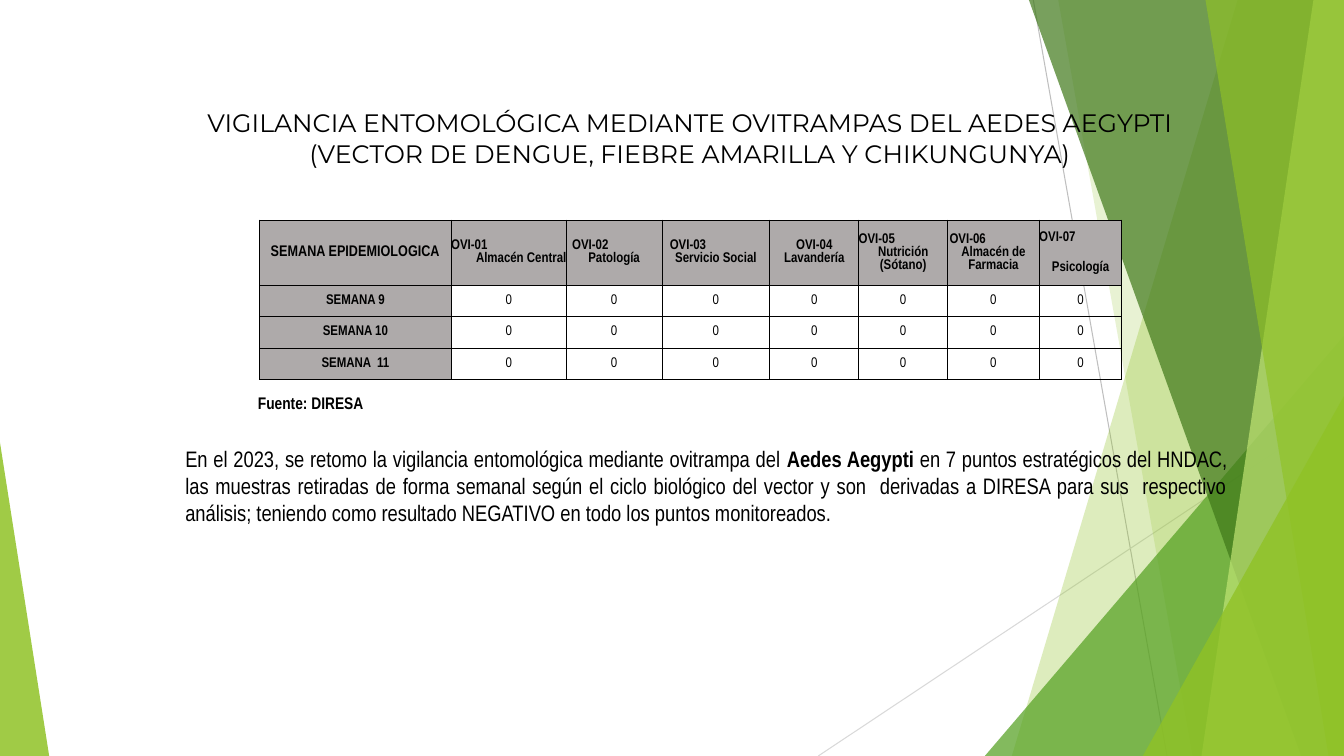
from dataclasses import dataclass

from lxml.etree import SubElement
from pptx import Presentation
from pptx.dml.color import RGBColor
from pptx.enum.shapes import MSO_CONNECTOR, MSO_SHAPE
from pptx.enum.text import MSO_ANCHOR, MSO_AUTO_SIZE, PP_ALIGN
from pptx.oxml.ns import qn
from pptx.util import Cm, Pt


@dataclass(frozen=True)
class Theme:
    lime: str = "90C226"
    green: str = "54A021"
    forest: str = "3F7819"
    pale: str = "C0E474"
    ink: str = "000000"
    header: str = "AEAAAA"
    steep_line: str = "BFBFBF"
    flat_line: str = "D9D9D9"
    title_font: str = "Montserrat"
    body_font: str = "Arial Narrow"
    title_size: int = 18
    body_size: int = 16
    source_size: int = 12
    corner_size: int = 11
    cell_size: int = 10


@dataclass(frozen=True)
class Box:
    left: float
    top: float
    width: float
    height: float

    def emu(self):
        return Cm(self.left), Cm(self.top), Cm(self.width), Cm(self.height)


THEME = Theme()
SLIDE = Box(0, 0, 33.87, 19.05)
COLUMN_WIDTHS = [4.83, 2.9, 2.41, 2.72, 2.24, 2.24, 2.31, 2.08]
ROW_HEIGHTS = [1.65, 0.79, 0.79, 0.79]
WEEKS = ["SEMANA 9", "SEMANA 10", "SEMANA  11"]
LEFT, CENTER, RIGHT = PP_ALIGN.LEFT, PP_ALIGN.CENTER, PP_ALIGN.RIGHT
TRAPS = [
    ("OVI-01", LEFT, 0, "Almacén Central", RIGHT, 0),
    ("OVI-02", LEFT, 0.15, "Patología", CENTER, 0),
    ("OVI-03", LEFT, 0.2, "Servicio Social", CENTER, 0),
    ("OVI-04", CENTER, 0, "Lavandería", CENTER, 0),
    ("OVI-05", LEFT, 0, "Nutrición (Sótano)", CENTER, 0),
    ("OVI-06", LEFT, 0.05, "Almacén de Farmacia", CENTER, 0),
    ("OVI-07", LEFT, 0, "Psicología", CENTER, 12),
]


def write(paragraph, text, size=THEME.cell_size, font=THEME.body_font,
          color=THEME.ink, bold=False, align=CENTER, indent=0, before=0):
    paragraph.alignment = align
    paragraph.space_before = Pt(before)
    if indent:
        properties = paragraph._p.get_or_add_pPr()
        properties.set("marL", str(Cm(indent)))
        properties.set("indent", "0")
    run = paragraph.add_run()
    run.text = text
    run.font.size = Pt(size)
    run.font.name = font
    run.font.bold = bold
    run.font.color.rgb = RGBColor.from_string(color)


def paint(shape, color, opacity):
    shape.shadow.inherit = False
    shape.fill.solid()
    shape.fill.fore_color.rgb = RGBColor.from_string(color)
    shape.line.fill.background()
    tint = shape.fill._xPr.find(qn("a:solidFill"))[0]
    SubElement(tint, qn("a:alpha"), val=str(opacity * 1000))


def add_triangle(slide, box, apex, color, opacity):
    triangle = slide.shapes.add_shape(MSO_SHAPE.ISOSCELES_TRIANGLE, *box.emu())
    triangle.adjustments[0] = apex
    paint(triangle, color, opacity)


def add_facet(slide, box, top_x, bottom_x, color, opacity):
    right, bottom = box.left + box.width, box.top + box.height
    outline = slide.shapes.build_freeform(Cm(box.left + top_x), Cm(box.top))
    outline.add_line_segments([
        (Cm(right), Cm(box.top)),
        (Cm(right), Cm(bottom)),
        (Cm(box.left + bottom_x), Cm(bottom)),
    ], close=True)
    paint(outline.convert_to_shape(), color, opacity)


def add_corner(slide, box, x, y, color, opacity):
    corner = Box(box.left + x, box.top + y, box.width - x, box.height - y)
    add_triangle(slide, corner, 1, color, opacity)


def add_ray(slide, box, start, end, color):
    ray = slide.shapes.add_connector(
        MSO_CONNECTOR.STRAIGHT,
        Cm(box.left + start[0]), Cm(box.top + start[1]),
        Cm(box.left + end[0]), Cm(box.top + end[1]))
    ray.line.color.rgb = RGBColor.from_string(color)
    ray.line.width = Pt(0.75)
    SubElement(ray._element.spPr, qn("a:effectLst"))


def add_decoration(slide, box):
    add_ray(slide, box, (5.42, 0), (8.79, box.height), THEME.steep_line)
    add_ray(slide, box, (box.width, 10.24), (0, box.height), THEME.flat_line)
    for draw, first, second, color, opacity in [
        (add_facet, 10.57, 4.88, THEME.lime, 30),
        (add_facet, 6.05, 9.43, THEME.lime, 20),
        (add_corner, 4.2, 8.46, THEME.green, 72),
        (add_facet, 5.31, 12.17, THEME.forest, 70),
        (add_facet, 12.48, 9.66, THEME.pale, 70),
        (add_facet, 9.76, 12.86, THEME.lime, 65),
        (add_corner, 8.18, 9.98, THEME.lime, 80),
    ]:
        draw(slide, box, first, second, color, opacity)


def format_cell(cell, fill=None):
    cell.margin_left = cell.margin_right = cell.margin_top = cell.margin_bottom = 0
    cell.vertical_anchor = MSO_ANCHOR.MIDDLE
    if fill:
        cell.fill.solid()
        cell.fill.fore_color.rgb = RGBColor.from_string(fill)
    else:
        cell.fill.background()
    properties = cell._tc.get_or_add_tcPr()
    for position, side in enumerate(("a:lnL", "a:lnR", "a:lnT", "a:lnB")):
        border = SubElement(properties, qn(side), w=str(Pt(0.5)))
        ink = SubElement(border, qn("a:solidFill"))
        SubElement(ink, qn("a:srgbClr"), val=THEME.ink)
        properties.insert(position, border)


def add_trap_table(slide, box):
    table = slide.shapes.add_table(
        len(ROW_HEIGHTS), len(COLUMN_WIDTHS), *box.emu()).table
    table.first_row = table.horz_banding = False
    for column, width in zip(table.columns, COLUMN_WIDTHS):
        column.width = Cm(width)
    for row, height in zip(table.rows, ROW_HEIGHTS):
        row.height = Cm(height)

    corner = table.cell(0, 0)
    format_cell(corner, THEME.header)
    write(corner.text_frame.paragraphs[0], "SEMANA EPIDEMIOLOGICA",
          size=THEME.corner_size, bold=True)
    for column, trap in enumerate(TRAPS, 1):
        code, code_align, indent, place, place_align, gap = trap
        heading = table.cell(0, column)
        format_cell(heading, THEME.header)
        write(heading.text_frame.paragraphs[0], code, bold=True,
              align=code_align, indent=indent)
        write(heading.text_frame.add_paragraph(), place, bold=True,
              align=place_align, before=gap)
    for row, week in enumerate(WEEKS, 1):
        for column, value in enumerate([week] + ["0"] * len(TRAPS)):
            cell = table.cell(row, column)
            format_cell(cell, None if column else THEME.header)
            write(cell.text_frame.paragraphs[0], value, bold=column == 0)


def add_text(slide, box, *pieces, wrap=True, **style):
    frame = slide.shapes.add_textbox(*box.emu()).text_frame
    frame.word_wrap = wrap
    frame.auto_size = MSO_AUTO_SIZE.SHAPE_TO_FIT_TEXT
    for text, bold in pieces:
        write(frame.paragraphs[0], text, bold=bold, **style)


def add_surveillance_slide(presentation, box):
    slide = presentation.slides.add_slide(presentation.slide_layouts[6])
    add_decoration(slide, Box(box.left + 20.62, box.top, 13.25, box.height))
    add_triangle(slide, Box(box.left, box.top + 11.15, 1.24, 7.9), 0, THEME.lime, 85)
    add_trap_table(slide, Box(box.left + 6.54, box.top + 5.54,
                              sum(COLUMN_WIDTHS), sum(ROW_HEIGHTS)))
    add_text(slide, Box(box.left + 4, box.top + 2.59, 26.77, 1.8),
             ("VIGILANCIA ENTOMOLÓGICA MEDIANTE OVITRAMPAS DEL AEDES AEGYPTI "
              "(VECTOR DE DENGUE, FIEBRE AMARILLA Y CHIKUNGUNYA)", False),
             size=THEME.title_size, font=THEME.title_font)
    add_text(slide, Box(box.left + 6.25, box.top + 9.78, 3.3, 0.76),
             ("Fuente: DIRESA", True),
             wrap=False, size=THEME.source_size, align=LEFT)
    add_text(slide, Box(box.left + 4.42, box.top + 11.1, 26.77, 2.31),
             ("En el 2023, se retomo la vigilancia entomológica mediante ovitrampa del ", False),
             ("Aedes Aegypti ", True),
             ("en 7 puntos estratégicos del HNDAC, las muestras retiradas de forma "
              "semanal según el ciclo biológico del vector y son  derivadas a DIRESA "
              "para sus  respectivo análisis; teniendo como resultado NEGATIVO en "
              "todo los puntos monitoreados.", False),
             size=THEME.body_size, align=PP_ALIGN.JUSTIFY)


def main():
    presentation = Presentation()
    presentation.slide_width = Cm(SLIDE.width)
    presentation.slide_height = Cm(SLIDE.height)
    add_surveillance_slide(presentation, SLIDE)
    presentation.save("out.pptx")


if __name__ == "__main__":
    main()
